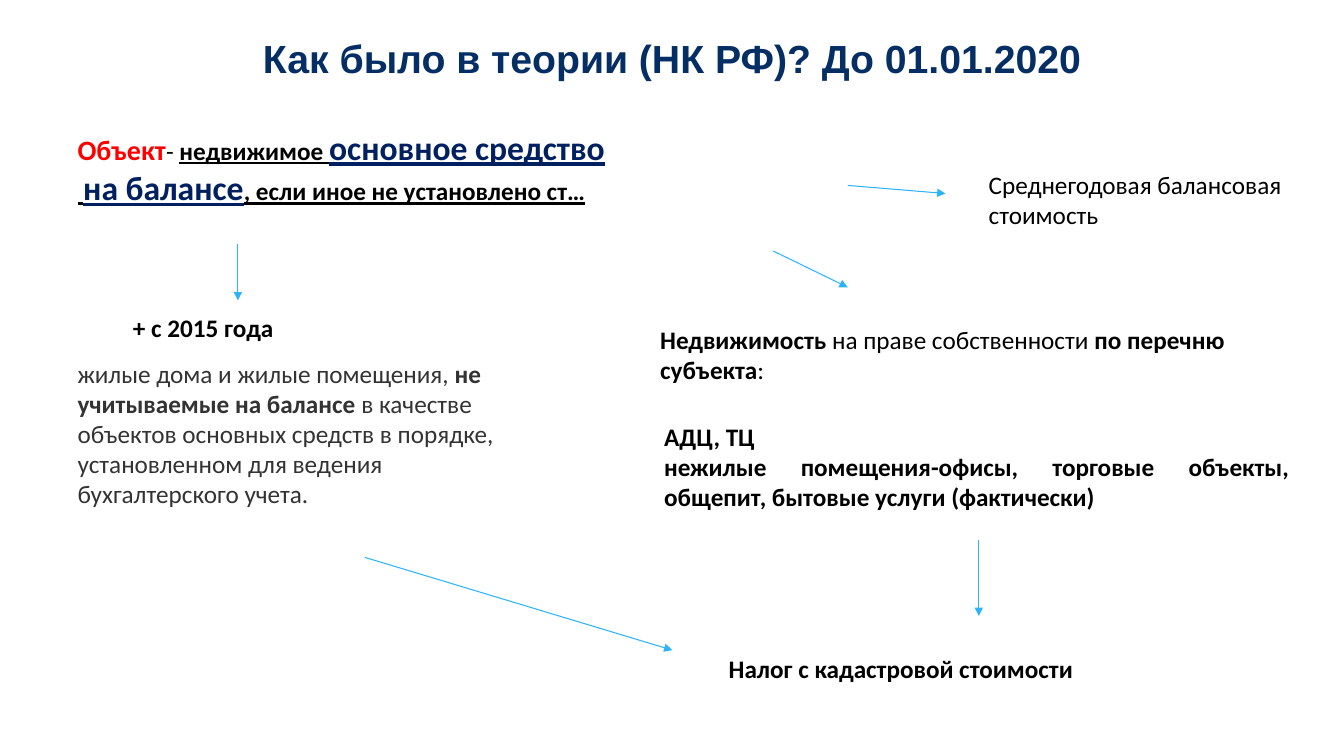
from dataclasses import dataclass

from lxml import etree
from pptx import Presentation
from pptx.dml.color import RGBColor
from pptx.enum.shapes import MSO_CONNECTOR
from pptx.enum.text import MSO_ANCHOR, PP_ALIGN
from pptx.oxml.ns import qn
from pptx.util import Inches, Pt

STRAIGHT = MSO_CONNECTOR.STRAIGHT
TOP = MSO_ANCHOR.TOP
LEFT, CENTER, JUSTIFY = PP_ALIGN.LEFT, PP_ALIGN.CENTER, PP_ALIGN.JUSTIFY
SLIDE_WIDTH, SLIDE_HEIGHT = Inches(13.333), Inches(7.5)


@dataclass(frozen=True)
class Theme:
    """Colours, fonts and sizes of the slide."""
    title: str = "052E65"
    accent: str = "FF0000"
    emphasis: str = "002060"
    text: str = "000000"
    muted: str = "333333"
    arrow: str = "2BB4FC"
    title_font: str = "Arial"
    body_font: str = "Calibri"
    title_size: int = 28
    large_size: int = 24
    term_size: int = 20
    body_size: int = 18
    arrow_width: float = 0.75


THEME = Theme()
BOLD = {"bold": True}
UNDERLINED = {"bold": True, "underline": True}
EMPHASIS = {**UNDERLINED, "size": THEME.large_size, "color": THEME.emphasis}
TERM = {"bold": True, "size": THEME.term_size, "color": THEME.accent}
MUTED = {"color": THEME.muted}
TITLE = {"bold": True, "size": THEME.title_size, "color": THEME.title,
         "name": THEME.title_font}


@dataclass(frozen=True)
class Region:
    """Box on the slide, in percent of the slide's width and height."""
    left: float
    top: float
    width: float
    height: float

    def point(self, column, row):
        """Return the slide position of an offset from the box corner."""
        return (round((self.left + column) * SLIDE_WIDTH / 100),
                round((self.top + row) * SLIDE_HEIGHT / 100))


def add_run(paragraph, text, style):
    """Add a run of text with body formatting changed by the style."""
    formats = {"name": THEME.body_font, "size": THEME.body_size, "bold": False,
               "color": THEME.text, **style}
    run = paragraph.add_run()
    run.text = text
    run.font.color.rgb = RGBColor.from_string(formats.pop("color"))
    formats["size"] = Pt(formats["size"])
    for name, value in formats.items():
        setattr(run.font, name, value)


def add_text(slide, region, offset, size, paragraphs, alignment=LEFT):
    """Place a text box at an offset inside a region."""
    width, height = size
    textbox = slide.shapes.add_textbox(
        *region.point(*offset),
        round(width * SLIDE_WIDTH / 100), round(height * SLIDE_HEIGHT / 100))
    frame = textbox.text_frame
    for name, value in {"word_wrap": True, "vertical_anchor": TOP}.items():
        setattr(frame, name, value)
    for index, runs in enumerate(paragraphs):
        paragraph = frame.add_paragraph() if index else frame.paragraphs[0]
        paragraph.alignment = alignment
        for text, style in runs:
            add_run(paragraph, text, style)


def add_arrow(slide, region, start, end):
    """Draw a thin arrow between two offsets inside a region."""
    connector = slide.shapes.add_connector(
        STRAIGHT, *region.point(*start), *region.point(*end))
    connector.line.color.rgb = RGBColor.from_string(THEME.arrow)
    connector.line.width = Pt(THEME.arrow_width)
    properties = connector.element.spPr
    etree.SubElement(properties.find(qn("a:ln")), qn("a:tailEnd"), type="triangle")
    etree.SubElement(properties, qn("a:effectLst"))


def add_title(slide, region):
    """Place the centred slide title."""
    add_text(slide, region, (0, 0), (region.width, region.height),
             [[("Как было в теории (НК РФ)? До 01.01.2020", TITLE)]], CENTER)


def add_tax_object(slide, region):
    """Place the definition of the taxed object."""
    add_text(slide, region, (0, 0), (region.width, region.height), [
        [("Объект", TERM), ("- ", {}), ("недвижимое", UNDERLINED),
         (" ", {"underline": True}), ("основное средство", EMPHASIS)],
        [(" ", UNDERLINED), ("на балансе", EMPHASIS),
         (", если иное не установлено ст…", UNDERLINED)],
    ])


def add_average_value(slide, region):
    """Place the average book value branch with its incoming arrow."""
    add_arrow(slide, region, (0, 2.8), (7.27, 3.87))
    add_text(slide, region, (9.75, 0), (region.width - 9.75, region.height),
             [[("Среднегодовая балансовая стоимость", {})]])


def add_housing(slide, region):
    """Place the housing branch and the arrow towards the tax."""
    add_arrow(slide, region, (12.67, 0), (12.67, 7.46))
    add_text(slide, region, (4.12, 8.4), (22.05, 5.33), [[("+ с 2015 года", BOLD)]])
    add_text(slide, region, (0, 14.4), (36.08, 21.6), [[
        ("жилые дома и жилые помещения, ", MUTED),
        ("не учитываемые на балансе", {**MUTED, **BOLD}),
        (" в качестве объектов основных средств в порядке, "
         "установленном для ведения бухгалтерского учета.", MUTED)]])
    add_arrow(slide, region, (22.12, 41.46), (region.width, region.height))


def add_listed_property(slide, region):
    """Place the listed property branch between its two arrows."""
    add_arrow(slide, region, (9.15, 0), (14.7, 4.8))
    add_text(slide, region, (0, 9.07), (46.58, 9.47), [[
        ("Недвижимость", BOLD), (" на праве собственности ", {}),
        ("по перечню субъекта", BOLD), (":", {})]])
    add_text(slide, region, (0.3, 21.87), (48, 13.47), [
        [("АДЦ, ТЦ", BOLD)],
        [("нежилые помещения-офисы, торговые объекты, "
          "общепит, бытовые услуги (фактически)", BOLD)]], JUSTIFY)
    add_arrow(slide, region, (24.45, 38.27), (24.45, region.height))


def add_cadastral_tax(slide, region):
    """Place the resulting tax."""
    add_text(slide, region, (0, 0), (region.width, region.height),
             [[("Налог с кадастровой стоимости", BOLD)]], JUSTIFY)


def main():
    """Build the slide and save the presentation."""
    presentation = Presentation()
    presentation.slide_width, presentation.slide_height = SLIDE_WIDTH, SLIDE_HEIGHT
    slide = presentation.slides.add_slide(presentation.slide_layouts[6])
    add_title(slide, Region(6.3, 3.87, 87.4, 7.6))
    add_tax_object(slide, Region(5.03, 16.13, 87.4, 16.13))
    add_average_value(slide, Region(63.08, 21.73, 35.7, 9.47))
    add_housing(slide, Region(5.03, 32.27, 45, 53.73))
    add_listed_property(slide, Region(48.38, 33.2, 48.3, 48.27))
    add_cadastral_tax(slide, Region(53.48, 85.73, 37.43, 5.33))
    presentation.save("out.pptx")


if __name__ == "__main__":
    main()
